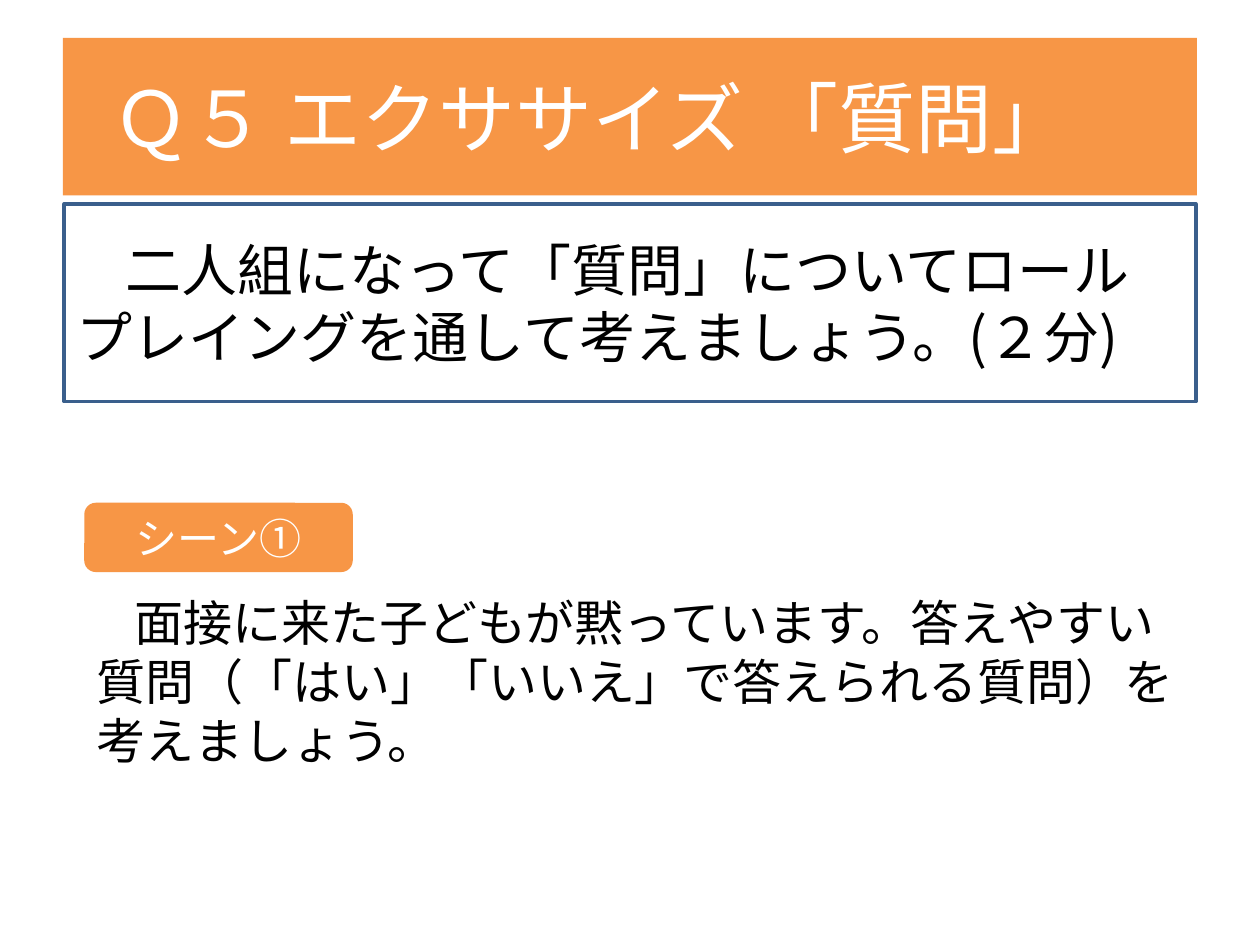
import dataclasses
import typing

import pptx
import pptx.dml.color
import pptx.enum.shapes
import pptx.enum.text
import pptx.oxml.ns
import pptx.slide
import pptx.util

Pt = pptx.util.Pt
MSO_SHAPE = pptx.enum.shapes.MSO_SHAPE
PP_ALIGN = pptx.enum.text.PP_ALIGN
FONT = "Noto Sans CJK JP"
ORANGE = "F79646"
BLUE = "3A5F8C"
WHITE = "FFFFFF"
BLACK = "000000"


@dataclasses.dataclass(frozen=True)
class Panel:
    text: str
    left: float
    top: float
    width: float
    height: float
    size: float
    color: str
    outline: typing.Optional[MSO_SHAPE] = None
    fill: typing.Optional[str] = None
    border: typing.Optional[str] = None
    align: PP_ALIGN = PP_ALIGN.LEFT
    indent: float = 0


PANELS = [
    Panel("Ｑ５ エクササイズ 「質問」\u3000".replace("\u3000", "　"), 36, 21.6, 648, 90, 44, WHITE,
          MSO_SHAPE.RECTANGLE, fill=ORANGE, align=PP_ALIGN.CENTER),
    Panel("二人組になって「質問」についてロールプレイングを通して考えましょう。(２分)",
          36.7, 116.6, 646.6, 113, 32, BLACK,
          MSO_SHAPE.RECTANGLE, border=BLUE, indent=28),
    Panel("シーン①", 48.2, 287.3, 153.4, 39.6, 24, WHITE,
          MSO_SHAPE.ROUNDED_RECTANGLE, fill=ORANGE, align=PP_ALIGN.CENTER),
    Panel("面接に来た子どもが黙っています。答えやすい質問（「はい」「いいえ」で答えられる質問）を考えましょう。",
          48.2, 326.9, 635, 124.6, 28, BLACK, indent=21.6),
]


def rgb(value: str) -> pptx.dml.color.RGBColor:
    return pptx.dml.color.RGBColor.from_string(value)


def write_text(frame: typing.Any, panel: Panel) -> None:
    frame.text = panel.text
    frame.word_wrap = True
    frame.vertical_anchor = pptx.enum.text.MSO_ANCHOR.MIDDLE
    paragraph = frame.paragraphs[0]
    paragraph.alignment = panel.align
    if panel.indent:
        properties = paragraph._p.get_or_add_pPr()
        properties.set("marL", "0")
        properties.set("indent", str(int(Pt(panel.indent))))
    for run in paragraph.runs:
        run.font.size = Pt(panel.size)
        run.font.name = FONT
        run.font.color.rgb = rgb(panel.color)
        east_asian = run.font._element.makeelement(
            pptx.oxml.ns.qn("a:ea"), {"typeface": FONT})
        run.font._element.append(east_asian)


def draw_panel(slide: pptx.slide.Slide, panel: Panel) -> None:
    bounds = [Pt(n) for n in (panel.left, panel.top, panel.width, panel.height)]
    if panel.outline is None:
        shape = slide.shapes.add_textbox(*bounds)
    else:
        shape = slide.shapes.add_shape(panel.outline, *bounds)
        shape.shadow.inherit = False
        if panel.fill:
            shape.fill.solid()
            shape.fill.fore_color.rgb = rgb(panel.fill)
        else:
            shape.fill.background()
        if panel.border:
            shape.line.color.rgb = rgb(panel.border)
            shape.line.width = Pt(2)
        else:
            shape.line.fill.background()
    write_text(shape.text_frame, panel)


def main() -> None:
    presentation = pptx.Presentation()
    presentation.slide_width = Pt(720)
    presentation.slide_height = Pt(540)
    slide = presentation.slides.add_slide(presentation.slide_layouts[6])
    for panel in PANELS:
        draw_panel(slide, panel)
    presentation.save("out.pptx")


if __name__ == "__main__":
    main()
